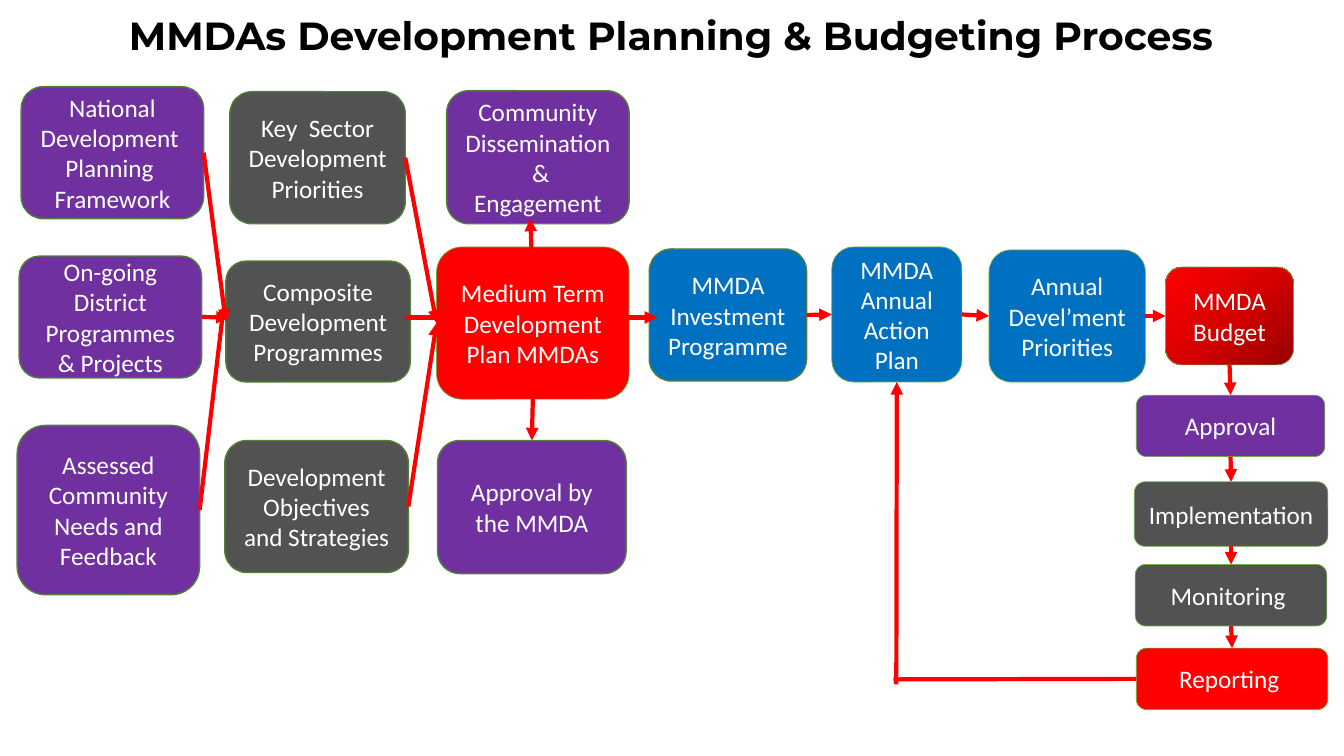
"""Build the MMDAs development planning and budgeting process slide."""
from copy import deepcopy
from dataclasses import dataclass
from typing import Optional, Union

from lxml.etree import SubElement
from pptx import Presentation
from pptx.dml.color import RGBColor
from pptx.enum.shapes import MSO_CONNECTOR as Connector, MSO_SHAPE as Shape
from pptx.enum.text import MSO_ANCHOR as Anchor, PP_ALIGN as Align
from pptx.oxml.ns import qn
from pptx.util import Inches, Pt

PURPLE, GREY, RED, BLUE = "7030A0", "525252", "FF0000", "0070C0"
BUDGET_STOPS = [(0, "970000"), (0.5, "D70000"), (1, "FF0000")]
TOP, LEFT, BOTTOM, RIGHT = range(4)


@dataclass
class Outline:
    color: str
    width: float


DARK = Outline("538035", 1)
LIGHT = Outline("70AD47", 0.5)


@dataclass
class Box:
    name: str
    text: str
    left: float
    top: float
    width: float
    height: float
    fill: Union[str, list]
    outline: Outline


@dataclass
class Joint:
    box: str
    side: int


@dataclass
class Point:
    x: float
    y: float


@dataclass
class Arrow:
    start: Union[Joint, Point]
    end: Union[Joint, Point]
    head: Optional[str] = "triangle"


BOXES = [
    Box("national", "National Development  Planning  Framework", 0.21, 0.86, 1.81, 1.31, PURPLE, DARK),
    Box("ongoing", "On-going District Programmes & Projects", 0.19, 2.54, 1.81, 1.21, PURPLE, DARK),
    Box("needs", "Assessed Community Needs and Feedback", 0.17, 4.22, 1.81, 1.68, PURPLE, DARK),
    Box("sector", "Key  Sector Development Priorities", 2.28, 0.91, 1.74, 1.31, GREY, DARK),
    Box("composite", "Composite Development Programmes", 2.24, 2.59, 1.83, 1.2, GREY, DARK),
    Box("objectives", "Development Objectives and Strategies", 2.23, 4.37, 1.82, 1.31, GREY, DARK),
    Box("community", "Community Dissemination  & Engagement", 4.43, 0.9, 1.81, 1.32, PURPLE, DARK),
    Box("plan", "Medium Term Development Plan MMDAs", 4.33, 2.45, 1.91, 1.51, RED, LIGHT),
    Box("mmda approval", "Approval by the MMDA", 4.34, 4.37, 1.87, 1.32, PURPLE, DARK),
    Box("investment", "MMDA Investment Programme", 6.44, 2.47, 1.56, 1.31, BLUE, DARK),
    Box("action", "MMDA Annual Action Plan", 8.25, 2.45, 1.29, 1.34, BLUE, LIGHT),
    Box("priorities", "Annual Devel’ment Priorities", 9.81, 2.48, 1.55, 1.31, BLUE, LIGHT),
    Box("budget", "MMDA Budget", 11.56, 2.65, 1.27, 0.97, BUDGET_STOPS, LIGHT),
    Box("approval", "Approval", 11.27, 3.92, 1.87, 0.61, PURPLE, LIGHT),
    Box("implementation", "Implementation", 11.25, 4.78, 1.92, 0.64, GREY, LIGHT),
    Box("monitoring", "Monitoring ", 11.26, 5.6, 1.9, 0.61, GREY, LIGHT),
    Box("reporting", "Reporting ", 11.27, 6.43, 1.9, 0.61, RED, LIGHT),
]

ROW = ["investment", "action", "priorities", "budget"]
COLUMN = ["budget", "approval", "implementation", "monitoring", "reporting"]
ARROWS = [
    Arrow(Joint("national", RIGHT), Joint("composite", LEFT)),
    Arrow(Joint("ongoing", RIGHT), Point(2.27, 3.15)),
    Arrow(Joint("needs", RIGHT), Point(2.22, 3.03)),
    Arrow(Joint("sector", RIGHT), Joint("plan", LEFT)),
    Arrow(Point(4.02, 3.15), Point(4.52, 3.15)),
    Arrow(Joint("objectives", RIGHT), Joint("plan", LEFT)),
    Arrow(Point(5.28, 2.7), Point(5.26, 2.17)),
    Arrow(Joint("plan", BOTTOM), Joint("mmda approval", TOP)),
    Arrow(Point(6.02, 3.15), Point(6.52, 3.15)),
    *[Arrow(Joint(a, RIGHT), Joint(b, LEFT)) for a, b in zip(ROW, ROW[1:])],
    *[Arrow(Joint(a, BOTTOM), Joint(b, TOP)) for a, b in zip(COLUMN, COLUMN[1:])],
    Arrow(Joint("reporting", LEFT), Point(8.86, 6.74), None),
    Arrow(Point(8.89, 6.79), Joint("action", BOTTOM)),
]


def paint(color_format, color: str) -> None:
    color_format.rgb = RGBColor.from_string(color)


def style_text(paragraph, font_name: str, size: float, color: str, bold: bool = False) -> None:
    paragraph.alignment = Align.CENTER
    for run in paragraph.runs:
        run.font.name = font_name
        run.font.size = Pt(size)
        run.font.bold = bold
        paint(run.font.color, color)


def fill_gradient(fill, stops: list) -> None:
    fill.gradient()
    fill.gradient_angle = 135
    first = fill.gradient_stops[0]
    first._gs.addnext(deepcopy(first._gs))
    for stop, (position, color) in zip(fill.gradient_stops, stops):
        stop.position = position
        paint(stop.color, color)


def draw_title(slide, text: str) -> None:
    title = slide.shapes.title
    title.left, title.top = Inches(0.61), Inches(0.09)
    title.width, title.height = Inches(12.09), Inches(0.54)
    frame = title.text_frame
    frame.text = text
    frame.vertical_anchor = Anchor.BOTTOM
    paragraph = frame.paragraphs[0]
    paragraph.line_spacing = 0.9
    style_text(paragraph, "Montserrat", 28, "000000", True)


def draw_box(slide, box: Box):
    shape = slide.shapes.add_shape(
        Shape.ROUNDED_RECTANGLE, Inches(box.left), Inches(box.top), Inches(box.width), Inches(box.height))
    shape.shadow.inherit = False
    if isinstance(box.fill, list):
        fill_gradient(shape.fill, box.fill)
    else:
        shape.fill.solid()
        paint(shape.fill.fore_color, box.fill)
    paint(shape.line.color, box.outline.color)
    shape.line.width = Pt(box.outline.width)
    frame = shape.text_frame
    frame.word_wrap = True
    frame.vertical_anchor = Anchor.MIDDLE
    frame.text = box.text
    style_text(frame.paragraphs[0], "Calibri", 18, "FFFFFF")
    return shape


def draw_arrow(slide, arrow: Arrow, shapes: dict) -> None:
    ends = [Point(0, 0) if isinstance(end, Joint) else end for end in (arrow.start, arrow.end)]
    connector = slide.shapes.add_connector(
        Connector.STRAIGHT, *[Inches(value) for end in ends for value in (end.x, end.y)])
    for end, connect in ((arrow.start, connector.begin_connect), (arrow.end, connector.end_connect)):
        if isinstance(end, Joint):
            connect(shapes[end.box], end.side)
    paint(connector.line.color, RED)
    connector.line.width = Pt(3)
    if arrow.head:
        SubElement(connector.line._get_or_add_ln(), qn("a:tailEnd"), type=arrow.head)
    SubElement(connector._element.spPr, qn("a:effectLst"))


def main() -> None:
    presentation = Presentation()
    presentation.slide_width, presentation.slide_height = Inches(13.33), Inches(7.5)
    slide = presentation.slides.add_slide(presentation.slide_layouts[5])
    draw_title(slide, "MMDAs Development Planning & Budgeting Process")
    shapes = {box.name: draw_box(slide, box) for box in BOXES}
    for arrow in ARROWS:
        draw_arrow(slide, arrow, shapes)
    presentation.save("out.pptx")


if __name__ == "__main__":
    main()
